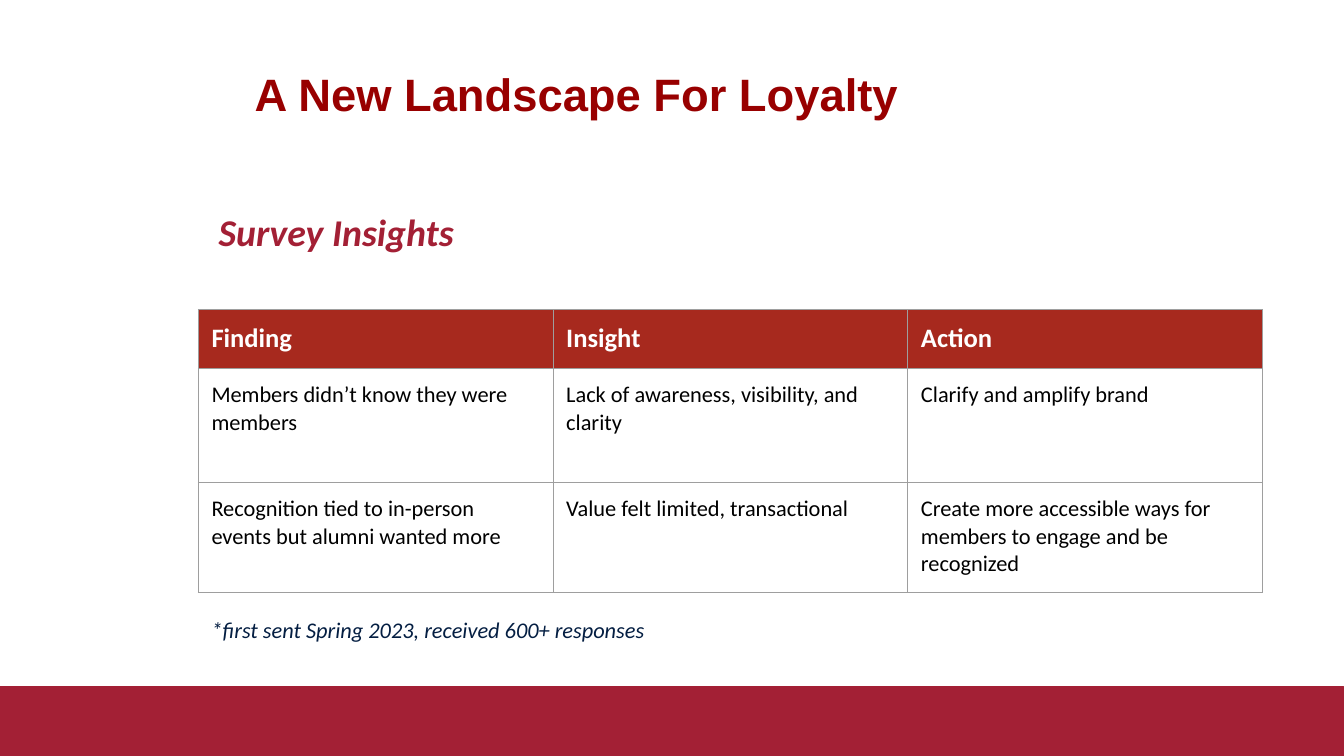
from dataclasses import dataclass

from lxml import etree
from pptx import Presentation, util as u
from pptx.dml import color
from pptx.enum import shapes, text
from pptx.oxml import ns


@dataclass(frozen=True)
class Style:
    size: float
    hue: str
    bold: bool = False
    slant: bool = False
    font: str = "Calibri"


@dataclass(frozen=True)
class Theme:
    band: str = "A32035"
    head: str = "A7291E"
    rule: str = "9E9E9E"
    title: Style = Style(32.4, "980000", bold=True, font="Arial")
    sub: Style = Style(27, "A32035", bold=True, slant=True)
    top: Style = Style(19, "FFFFFF", bold=True)
    body: Style = Style(16, "000000")
    note: Style = Style(16, "041E42", slant=True)


@dataclass(frozen=True)
class Label:
    words: str
    left: float
    top: float
    width: float
    height: float
    style: Style
    pad: float = 0.33
    anchor: text.MSO_ANCHOR = text.MSO_ANCHOR.MIDDLE


THEME = Theme()
WIDE, HIGH = 33.87, 19.05
BAND = 1.75
PAD = 0.33
LABELS = (
    Label("A New Landscape For Loyalty", 6.17, 1.6, 25.4, 1.52, THEME.title, pad=0.25),
    Label("Survey Insights", 5.18, 5.11, 19.25, 1.45, THEME.sub),
    Label("*first sent Spring 2023, received 600+ responses", 5, 15.19, 22.28, 1.37,
          THEME.note, anchor=text.MSO_ANCHOR.TOP),
)
ROWS = (
    ("Finding", "Insight", "Action"),
    ("Members didn’t know they were members",
     "Lack of awareness, visibility, and clarity",
     "Clarify and amplify brand"),
    ("Recognition tied to in-person\nevents but alumni wanted more",
     "Value felt limited, transactional",
     "Create more accessible ways for members to engage and be recognized"),
)
TALL = (1.48, 2.87, 2.77)
COL = 8.94


def rgb(hue: str) -> color.RGBColor:
    return color.RGBColor.from_string(hue)


def write(frame, words: str, style: Style) -> None:
    """Put each line of the words in its own paragraph."""
    for i, line in enumerate(words.split("\n")):
        para = frame.add_paragraph() if i else frame.paragraphs[0]
        run = para.add_run()
        run.text = line
        font = run.font
        font.name, font.size = style.font, u.Pt(style.size)
        font.bold, font.italic = style.bold, style.slant
        font.color.rgb = rgb(style.hue)


def inset(box, pad: float) -> None:
    box.margin_left = box.margin_right = u.Cm(pad)
    box.margin_top = box.margin_bottom = u.Cm(min(pad, PAD))


def add_label(slide, label: Label) -> None:
    box = slide.shapes.add_textbox(u.Cm(label.left), u.Cm(label.top),
                                   u.Cm(label.width), u.Cm(label.height))
    frame = box.text_frame
    frame.word_wrap = True
    frame.vertical_anchor = label.anchor
    inset(frame, label.pad)
    write(frame, label.words, label.style)


def add_rules(cell) -> None:
    """Line all four sides of a cell; call before its fill is set."""
    props = cell._tc.get_or_add_tcPr()
    for side in ("a:lnL", "a:lnR", "a:lnT", "a:lnB"):
        line = etree.SubElement(props, ns.qn(side), w=str(u.Pt(0.75)))
        fill = etree.SubElement(line, ns.qn("a:solidFill"))
        etree.SubElement(fill, ns.qn("a:srgbClr"), val=THEME.rule)


def add_grid(slide) -> None:
    grid = slide.shapes.add_table(len(ROWS), len(ROWS[0]), u.Cm(5), u.Cm(7.8),
                                  u.Cm(COL * len(ROWS[0])), u.Cm(sum(TALL))).table
    for col in grid.columns:
        col.width = u.Cm(COL)
    for r, (row, tall) in enumerate(zip(ROWS, TALL)):
        grid.rows[r].height = u.Cm(tall)
        for c, words in enumerate(row):
            cell = grid.cell(r, c)
            inset(cell, PAD)
            add_rules(cell)
            if r == 0:
                cell.fill.solid()
                cell.fill.fore_color.rgb = rgb(THEME.head)
            else:
                cell.fill.background()
            write(cell.text_frame, words, THEME.body if r else THEME.top)


def add_band(slide) -> None:
    band = slide.shapes.add_shape(shapes.MSO_SHAPE.RECTANGLE, 0, u.Cm(HIGH - BAND),
                                  u.Cm(WIDE), u.Cm(BAND))
    band.shadow.inherit = False
    band.fill.solid()
    band.fill.fore_color.rgb = rgb(THEME.band)
    band.line.color.rgb = rgb(THEME.band)
    band.line.width = u.Pt(0.75)


def main() -> None:
    deck = Presentation()
    deck.slide_width, deck.slide_height = u.Cm(WIDE), u.Cm(HIGH)
    slide = deck.slides.add_slide(deck.slide_layouts[6])
    add_band(slide)
    for label in LABELS:
        add_label(slide, label)
    add_grid(slide)
    deck.save("out.pptx")


if __name__ == "__main__":
    main()
